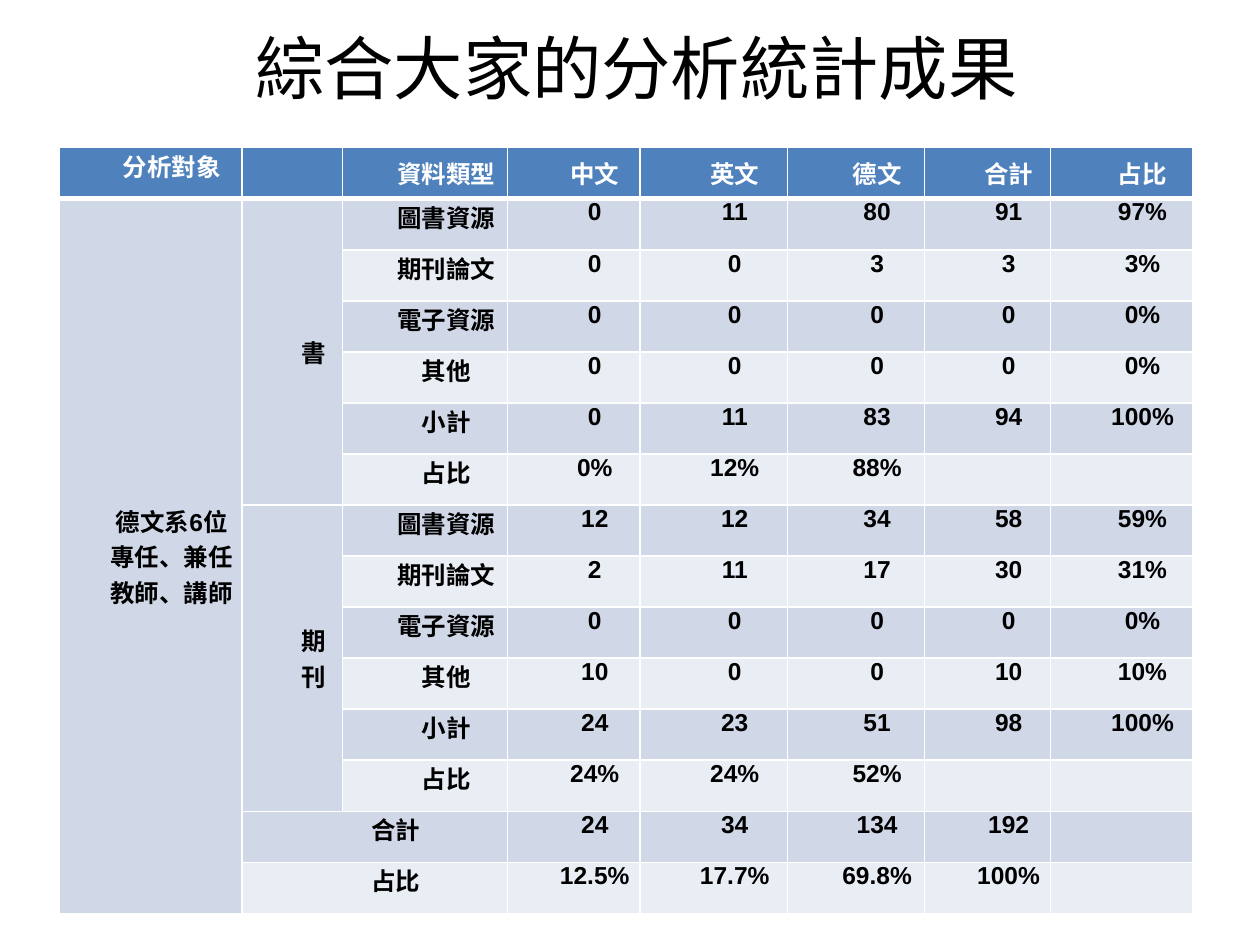
from lxml.etree import SubElement
from pptx import Presentation
from pptx.dml.color import RGBColor
from pptx.enum.text import MSO_ANCHOR as Anchor, MSO_AUTO_SIZE as AutoSize, PP_ALIGN as Align
from pptx.oxml.ns import qn
from pptx.util import Pt

HEADER, BAND_DARK, BAND_LIGHT = "4F81BD", "D0D8E8", "E9EDF4"
WHITE, BLACK = "FFFFFF", "000000"
COLUMN_WIDTHS = [104.2, 57.7, 94.3, 75.5, 84.5, 78.3, 72, 81]
ROW_HEIGHT = 29.18

ROWS = [
    ["分析對象", "", "資料類型", "中文", "英文", "德文", "合計", "占比"],
    ["德文系6位專任、兼任教師、講師", "書", "圖書資源", "0", "11", "80", "91", "97%"],
    ["", "", "期刊論文", "0", "0", "3", "3", "3%"],
    ["", "", "電子資源", "0", "0", "0", "0", "0%"],
    ["", "", "其他", "0", "0", "0", "0", "0%"],
    ["", "", "小計", "0", "11", "83", "94", "100%"],
    ["", "", "占比", "0%", "12%", "88%", "", ""],
    ["", "期刊", "圖書資源", "12", "12", "34", "58", "59%"],
    ["", "", "期刊論文", "2", "11", "17", "30", "31%"],
    ["", "", "電子資源", "0", "0", "0", "0", "0%"],
    ["", "", "其他", "10", "0", "0", "10", "10%"],
    ["", "", "小計", "24", "23", "51", "98", "100%"],
    ["", "", "占比", "24%", "24%", "52%", "", ""],
    ["", "合計", "", "24", "34", "134", "192", ""],
    ["", "占比", "", "12.5%", "17.7%", "69.8%", "100%", ""],
]
# First and last cell of each merged area, as (row, column)
MERGES = [((1, 0), (14, 0)), ((1, 1), (6, 1)), ((7, 1), (12, 1)),
          ((13, 1), (13, 2)), ((14, 1), (14, 2))]
MIDDLE_CELLS = {(0, column) for column in range(2, 8)} | {(1, 0), (1, 1), (7, 1)}


def color(value):
    return RGBColor.from_string(value)


def set_values(target, values):
    for name, value in values.items():
        setattr(target, name, value)


def set_borders(cell, widths):
    """Draw white cell borders; widths maps a side (L, R, T, B) to points."""
    properties = cell._tc.get_or_add_tcPr()
    for side, width in widths.items():
        line = SubElement(properties, qn(f"a:ln{side}"), w=str(Pt(width)))
        fill = SubElement(line, qn("a:solidFill"))
        SubElement(fill, qn("a:srgbClr"), val=WHITE)


def add_title(slide, left, top, width, height):
    title = slide.shapes.title
    set_values(title, {"left": Pt(left), "top": Pt(top),
                       "width": Pt(width), "height": Pt(height)})
    frame = title.text_frame
    frame.text = "綜合大家的分析統計成果"
    set_values(frame, {"auto_size": AutoSize.NONE, "word_wrap": True,
                       "vertical_anchor": Anchor.TOP, "margin_top": 0})
    paragraph = frame.paragraphs[0]
    set_values(paragraph, {"alignment": Align.CENTER, "line_spacing": 0.84})
    font = paragraph.runs[0].font
    set_values(font, {"name": "Cabin", "size": Pt(39.6)})
    font.color.rgb = color(BLACK)


def format_cell(cell, row, column, text):
    middle = (row, column) in MIDDLE_CELLS
    set_values(cell, {"margin_left": Pt(5), "margin_right": Pt(5),
                      "margin_top": 0, "margin_bottom": 0,
                      "vertical_anchor": Anchor.MIDDLE if middle else Anchor.TOP})
    set_borders(cell, {"L": 1, "R": 1, "T": 3 if row == 1 else 1,
                       "B": 3 if row == 0 else 1})
    cell.fill.solid()
    band = BAND_DARK if row % 2 else BAND_LIGHT
    cell.fill.fore_color.rgb = color(HEADER if row == 0 else band)
    if not text:
        return
    cell.text = text
    paragraph = cell.text_frame.paragraphs[0]
    paragraph.alignment = Align.CENTER
    paragraph_properties = paragraph._p.get_or_add_pPr()
    paragraph_properties.set("marL", str(Pt(24)))
    paragraph_properties.set("indent", "0")
    font = paragraph.runs[0].font
    set_values(font, {"name": "Arial", "size": Pt(14), "bold": True})
    font.color.rgb = color(BLACK if row else WHITE)


def add_statistics_table(slide, left, top):
    table = slide.shapes.add_table(
        len(ROWS), len(COLUMN_WIDTHS), Pt(left), Pt(top),
        Pt(sum(COLUMN_WIDTHS)), Pt(ROW_HEIGHT * len(ROWS))).table
    for column, width in zip(table.columns, COLUMN_WIDTHS):
        column.width = Pt(width)
    for row_index, texts in enumerate(ROWS):
        table.rows[row_index].height = Pt(ROW_HEIGHT)
        for column_index, text in enumerate(texts):
            format_cell(table.cell(row_index, column_index), row_index, column_index, text)
    for first, last in MERGES:
        table.cell(*first).merge(table.cell(*last))
    table.cell(1, 0)._tc.get_or_add_tcPr().set("vert", "wordArtVertRtl")


def main():
    presentation = Presentation()
    set_values(presentation, {"slide_width": Pt(720), "slide_height": Pt(540)})
    slide = presentation.slides.add_slide(presentation.slide_layouts[5])
    add_title(slide, 39.6, 22.3, 648, 90)
    add_statistics_table(slide, 34, 84.4)
    presentation.save("out.pptx")


if __name__ == "__main__":
    main()
